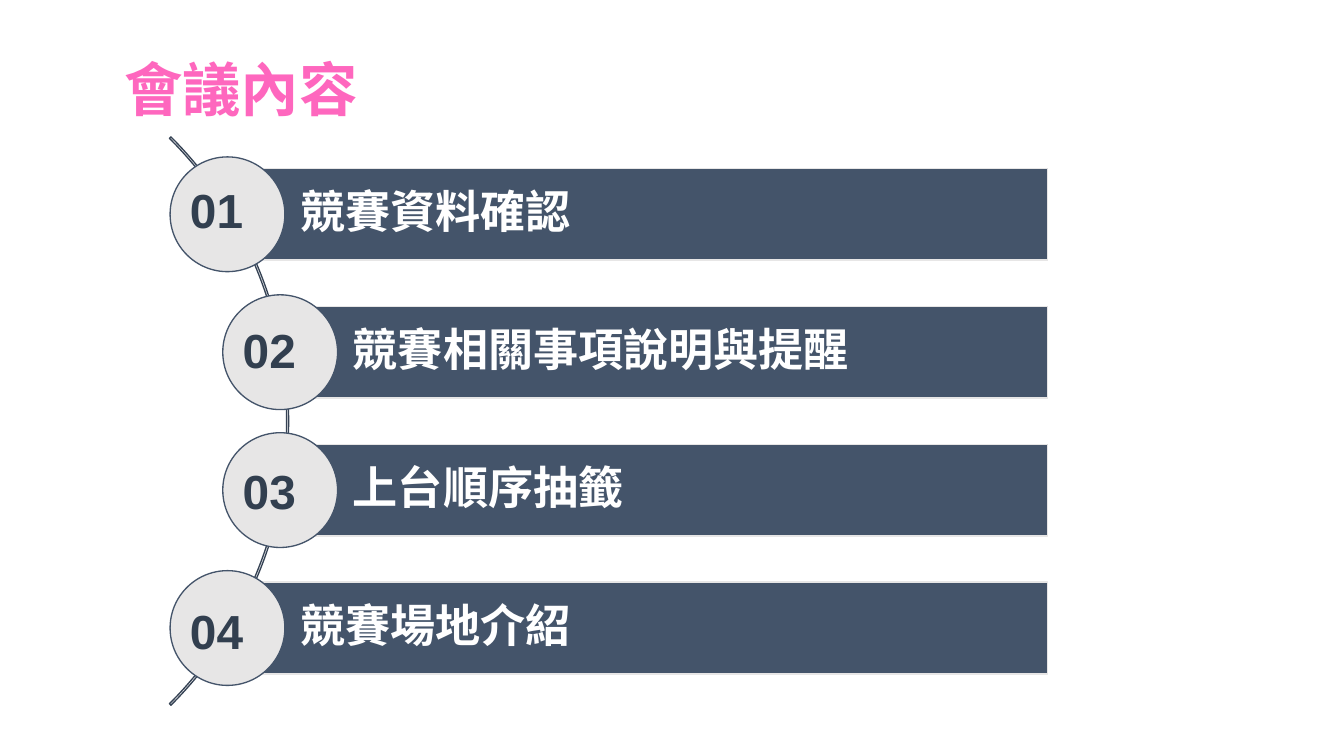
from pptx import Presentation
from pptx.dml.color import RGBColor
from pptx.enum.shapes import MSO_SHAPE as Shape
from pptx.enum.text import MSO_ANCHOR as Anchor, MSO_AUTO_SIZE as Fit, PP_ALIGN as Align
from pptx.oxml.ns import qn
from pptx.util import Cm, Pt
from lxml.etree import SubElement

HAN, LATIN = "Noto Sans CJK TC", "Arial"
PINK, WHITE, SLATE = "FE67BE", "FFFFFF", "44546A"
GREY, NAVY = "E7E6E6", "323F4F"

TOPICS = ["競賽資料確認", "競賽相關事項說明與提醒", "上台順序抽籤", "競賽場地介紹"]
INDENTS = [4.52, 5.92, 5.92, 4.52]  # left edges of the circles, following the arc
TOP, PITCH = 4.17, 3.665
DISC, BAR = 3.05, 2.44
RIGHT = 27.84


def tint(code):
    return RGBColor.from_string(code)


def write(frame, text, font, size, color, align, anchor=Anchor.TOP):
    frame.text = text
    frame.word_wrap = True
    frame.auto_size = Fit.NONE
    frame.vertical_anchor = anchor
    para = frame.paragraphs[0]
    para.alignment = align
    para.line_spacing = 0.9
    run = para.runs[0]
    run.font.name = font
    run.font.size = Pt(size)
    run.font.bold = True
    run.font.color.rgb = tint(color)
    # East Asian typeface
    SubElement(run.font._element, qn("a:ea"), typeface=font)


def draw(slide, kind, box, fill, line):
    shape = slide.shapes.add_shape(kind, *map(Cm, box))
    shape.shadow.inherit = False
    if fill:
        shape.fill.solid()
        shape.fill.fore_color.rgb = tint(fill)
    else:
        shape.fill.background()
    shape.line.color.rgb = tint(line)
    shape.line.width = Pt(1)
    return shape


def add_title(slide):
    title = slide.shapes.title
    title.left, title.top, title.width, title.height = map(Cm, (2.95, 1.5, 6.91, 2.03))
    write(title.text_frame, "會議內容", HAN, 44, PINK, Align.CENTER)


def add_arc(slide):
    arc = draw(slide, Shape.BLOCK_ARC, (-13.69, 0.51, 21.36, 21.36), None, "354254")
    for i, value in enumerate((189, 27, 0.0026)):
        arc.adjustments[i] = value


def add_topic(slide, text, left, top):
    # Bar starts at the middle of its circle
    start = left + DISC / 2
    box = (start, top + (DISC - BAR) / 2, RIGHT - start, BAR)
    bar = draw(slide, Shape.RECTANGLE, box, SLATE, GREY)
    frame = bar.text_frame
    frame.margin_left = Cm(1.93)
    frame.margin_right = frame.margin_top = frame.margin_bottom = Cm(0.23)
    write(frame, text, HAN, 34, WHITE, Align.LEFT, Anchor.MIDDLE)
    draw(slide, Shape.OVAL, (left, top, DISC, DISC), GREY, SLATE)


def add_number(slide, text, left, top):
    box = slide.shapes.add_textbox(*map(Cm, (left, top, 3.73, 1.37)))
    write(box.text_frame, text, LATIN, 36, NAVY, Align.CENTER)


def main():
    deck = Presentation()
    deck.slide_width, deck.slide_height = Cm(35.71), Cm(20.09)
    slide = deck.slides.add_slide(deck.slide_layouts[5])

    add_title(slide)
    add_arc(slide)
    for i, (topic, left) in enumerate(zip(TOPICS, INDENTS)):
        add_topic(slide, topic, left, TOP + i * PITCH)
        add_number(slide, f"{i + 1:02}", left - 0.63, 4.85 + i * 3.73)

    deck.save("out.pptx")


if __name__ == "__main__":
    main()
